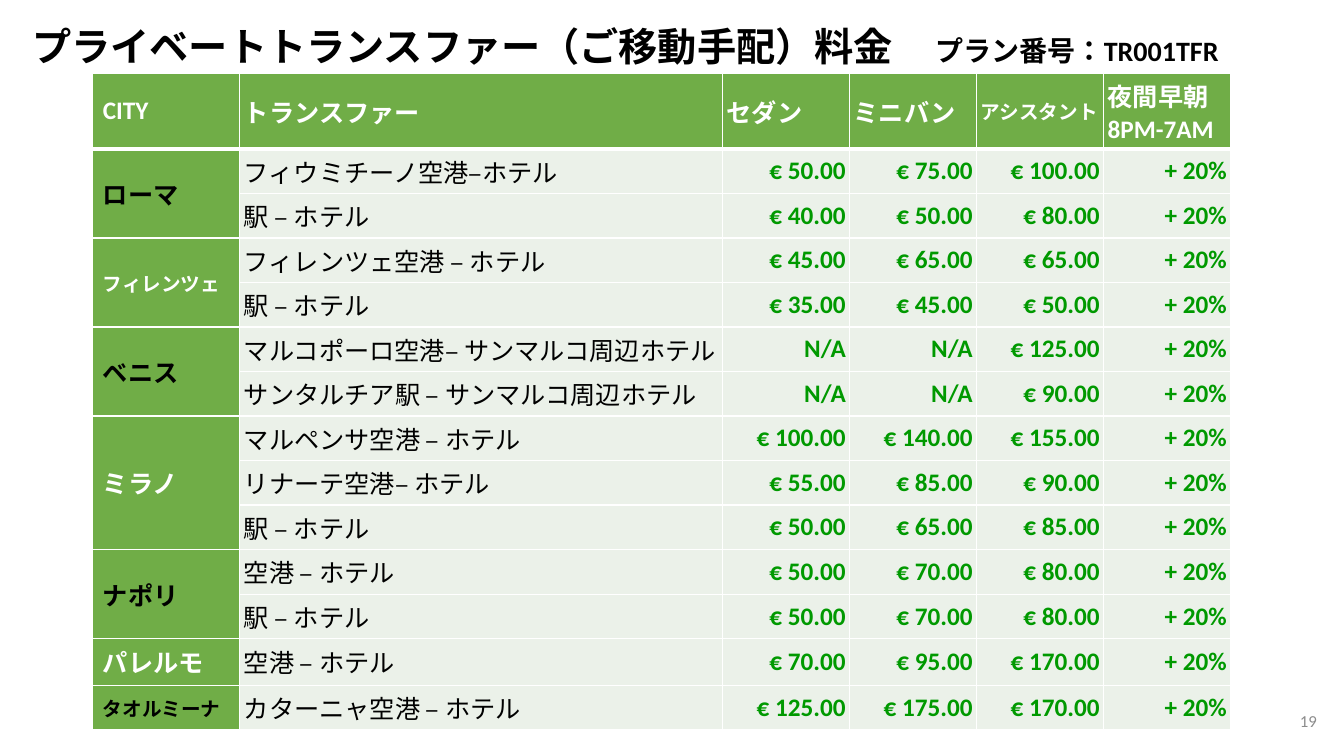
from dataclasses import dataclass

from lxml.etree import SubElement
from pptx import Presentation
from pptx.dml.color import RGBColor
from pptx.enum.lang import MSO_LANGUAGE_ID as Language
from pptx.enum.text import MSO_ANCHOR as Anchor, PP_ALIGN as Align
from pptx.oxml.ns import qn
from pptx.util import Inches, Length, Pt

SLIDE_WIDTH = Inches(13.33)
SLIDE_HEIGHT = Inches(7.5)
BLACK = "000000"
WHITE = "FFFFFF"
GREEN = "70AD47"
PALE = "EBF1E9"
PRICE = "009900"
GREY = "8C8C8C"
SURCHARGE = "+ 20%"
HEADINGS = ["CITY", "トランスファー", "セダン", "ミニバン", "アシスタント", "夜間早朝8PM-7AM"]
COLUMN_SHARES = [10.95, 35.93] + [9.45] * 4
HEADER_SHARE, ROW_SHARE, LAST_SHARE = 6.27, 5.33, 3.6


@dataclass
class Route:
    name: str
    sedan: str
    minivan: str
    assistant: str


@dataclass
class City:
    name: str
    routes: list[Route]


@dataclass
class Style:
    size: int
    color: str
    bold: bool = True
    align: Align = Align.LEFT


CITIES = [
    City("ローマ", [
        Route("フィウミチーノ空港–ホテル", "€ 50.00", "€ 75.00", "€ 100.00"),
        Route("駅 – ホテル", "€ 40.00", "€ 50.00", "€ 80.00"),
    ]),
    City("フィレンツェ", [
        Route("フィレンツェ空港 – ホテル", "€ 45.00", "€ 65.00", "€ 65.00"),
        Route("駅 – ホテル", "€ 35.00", "€ 45.00", "€ 50.00"),
    ]),
    City("ベニス", [
        Route("マルコポーロ空港– サンマルコ周辺ホテル", "N/A", "N/A", "€ 125.00"),
        Route("サンタルチア駅 – サンマルコ周辺ホテル", "N/A", "N/A", "€ 90.00"),
    ]),
    City("ミラノ", [
        Route("マルペンサ空港 – ホテル", "€ 100.00", "€ 140.00", "€ 155.00"),
        Route("リナーテ空港– ホテル", "€ 55.00", "€ 85.00", "€ 90.00"),
        Route("駅 – ホテル", "€ 50.00", "€ 65.00", "€ 85.00"),
    ]),
    City("ナポリ", [
        Route("空港 – ホテル", "€ 50.00", "€ 70.00", "€ 80.00"),
        Route("駅 – ホテル", "€ 50.00", "€ 70.00", "€ 80.00"),
    ]),
    City("パレルモ", [Route("空港 – ホテル", "€ 70.00", "€ 95.00", "€ 170.00")]),
    City("タオルミーナ", [Route("カターニャ空港 – ホテル", "€ 125.00", "€ 175.00", "€ 170.00")]),
]


def across(percent: float) -> Length:
    return Length(round(SLIDE_WIDTH * percent / 100))


def down(percent: float) -> Length:
    return Length(round(SLIDE_HEIGHT * percent / 100))


def rgb(code: str) -> RGBColor:
    return RGBColor.from_string(code)


def format_span(span, style: Style) -> None:
    span.font.name = "Calibri"
    span.font.size = Pt(style.size)
    span.font.bold = style.bold
    span.font.color.rgb = rgb(style.color)
    span.font.language_id = Language.JAPANESE


def write(frame, text: str, style: Style) -> None:
    frame.text = text
    para = frame.paragraphs[0]
    para.alignment = style.align
    for span in para.runs:
        format_span(span, style)


def add_border(cell, side: str, points: int) -> None:
    properties = cell._tc.get_or_add_tcPr()
    line = SubElement(properties, qn(f"a:ln{side}"), w=str(Pt(points)))
    fill = SubElement(line, qn("a:solidFill"))
    SubElement(fill, qn("a:srgbClr"), val=WHITE)


def dress_cell(cell, row: int, column: int) -> None:
    thick = {(0, "B"), (1, "T")}
    for side in "LRTB":
        add_border(cell, side, 3 if (row, side) in thick else 1)
    cell.fill.solid()
    cell.fill.fore_color.rgb = rgb(GREEN if row == 0 or column == 0 else PALE)
    cell.vertical_anchor = Anchor.MIDDLE
    if column > 0:
        cell.margin_left = cell.margin_right = Inches(0.04)
        cell.margin_top = cell.margin_bottom = Inches(0.04)


def label_size(text: str) -> int:
    return 14 if text in ("アシスタント", "フィレンツェ", "タオルミーナ") else 18


def add_title(page) -> None:
    title = page.shapes.title
    title.left, title.top = across(1.65), down(3.2)
    title.width, title.height = across(95.87), down(6.53)
    frame = title.text_frame
    frame.word_wrap = True
    frame.vertical_anchor = Anchor.MIDDLE
    para = frame.paragraphs[0]
    para.alignment = Align.LEFT
    para.line_spacing = 0.9
    tabs = SubElement(para._p.get_or_add_pPr(), qn("a:tabLst"))
    SubElement(tabs, qn("a:tab"), pos=str(across(67.2)), algn="l")
    para.text = "プライベートトランスファー（ご移動手配）料金\t"
    plan = para.add_run()
    plan.text = "プラン番号：TR001TFR"
    for span, size in zip(para.runs, (28, 20)):
        format_span(span, Style(size, BLACK))


def add_prices(page) -> None:
    count = sum(len(city.routes) for city in CITIES)
    heights = [HEADER_SHARE] + [ROW_SHARE] * (count - 1) + [LAST_SHARE]
    table = page.shapes.add_table(
        count + 1, len(HEADINGS), across(6.9), down(9.73),
        across(sum(COLUMN_SHARES)), down(sum(heights)),
    ).table
    table.horz_banding = False
    for column, share in zip(table.columns, COLUMN_SHARES):
        column.width = across(share)
    for line, share in zip(table.rows, heights):
        line.height = down(share)
    for row in range(count + 1):
        for column in range(len(HEADINGS)):
            dress_cell(table.cell(row, column), row, column)
    for column, heading in enumerate(HEADINGS):
        write(table.cell(0, column).text_frame, heading, Style(label_size(heading), WHITE))

    row = 1
    for index, city in enumerate(CITIES):
        label = table.cell(row, 0)
        if len(city.routes) > 1:
            label.merge(table.cell(row + len(city.routes) - 1, 0))
        color = WHITE if index % 2 else BLACK
        write(label.text_frame, city.name, Style(label_size(city.name), color))
        for route in city.routes:
            write(table.cell(row, 1).text_frame, route.name, Style(18, BLACK, bold=False))
            prices = [route.sedan, route.minivan, route.assistant, SURCHARGE]
            for column, price in enumerate(prices, start=2):
                write(table.cell(row, column).text_frame, price, Style(18, PRICE, align=Align.RIGHT))
            row += 1


def add_page_number(page) -> None:
    box = page.shapes.add_textbox(across(76.22), down(92.67), across(22.5), down(5.33))
    box.text_frame.word_wrap = True
    box.text_frame.vertical_anchor = Anchor.MIDDLE
    write(box.text_frame, "19", Style(12, GREY, bold=False, align=Align.RIGHT))


def main() -> None:
    deck = Presentation()
    deck.slide_width, deck.slide_height = SLIDE_WIDTH, SLIDE_HEIGHT
    page = deck.slides.add_slide(deck.slide_layouts.get_by_name("Title Only"))
    add_title(page)
    add_prices(page)
    add_page_number(page)
    deck.save("out.pptx")


if __name__ == "__main__":
    main()
